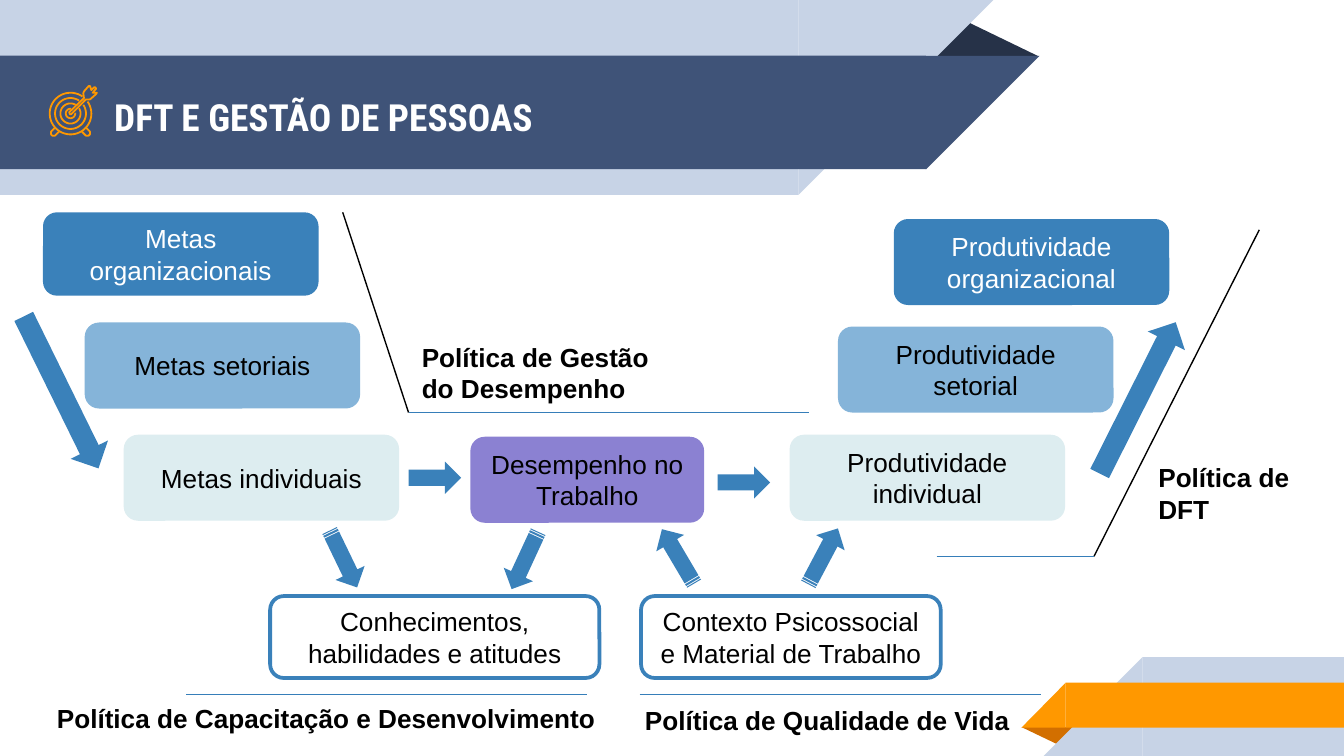
"""Build a slide that links work-force sizing (DFT) to people management."""
from math import cos, radians, sin

from lxml import etree
from pptx import Presentation
from pptx.dml.color import RGBColor
from pptx.enum.shapes import MSO_CONNECTOR, MSO_SHAPE
from pptx.enum.text import MSO_ANCHOR, MSO_AUTO_SIZE, PP_ALIGN
from pptx.oxml.ns import qn
from pptx.util import Inches, Pt

RECT, ROUND = MSO_SHAPE.RECTANGLE, MSO_SHAPE.ROUNDED_RECTANGLE
PEAK, WEDGE = MSO_SHAPE.ISOSCELES_TRIANGLE, MSO_SHAPE.RIGHT_TRIANGLE
RIGHT, DOWN = MSO_SHAPE.RIGHT_ARROW, MSO_SHAPE.DOWN_ARROW
STRIPED = MSO_SHAPE.STRIPED_RIGHT_ARROW
LINE = MSO_CONNECTOR.STRAIGHT
LEFT, CENTER = PP_ALIGN.LEFT, PP_ALIGN.CENTER
TOP, MIDDLE = MSO_ANCHOR.TOP, MSO_ANCHOR.MIDDLE
GROW, FIXED = MSO_AUTO_SIZE.SHAPE_TO_FIT_TEXT, MSO_AUTO_SIZE.NONE

HEX = {
    "white": "FFFFFF", "black": "000000", "navy": "3F5378", "night": "263248",
    "mist": "C7D3E6", "orange": "FF9800", "rust": "D26F00", "blue": "3A81BA",
    "sky": "85B4D9", "ice": "DDEDF0", "violet": "8B81D2", "rule": "367EB9",
}
INK = {name: RGBColor.from_string(code) for name, code in HEX.items()}

deck = Presentation()
deck.slide_width = Inches(10)
deck.slide_height = deck.slide_width * 9 // 16
UNIT = deck.slide_width / 100
slide = deck.slides.add_slide(deck.slide_layouts[5])
shapes = slide.shapes


def put(kind, box, fill, turn=0, flip=False):
    shape = shapes.add_shape(kind, *[round(n * UNIT) for n in box])
    shape.shadow.inherit = False
    shape.fill.solid()
    shape.fill.fore_color.rgb = INK[fill]
    shape.line.fill.background()
    shape.rotation = turn
    if flip:
        shape._element.spPr.find(qn("a:xfrm")).set("flipH", "1")
    return shape


def write(shape, text, size=14, font="Arial", color="black", bold=False,
          align=CENTER, anchor=MIDDLE, fit=FIXED):
    frame = shape.text_frame
    frame.word_wrap = True
    frame.auto_size = fit
    frame.vertical_anchor = anchor
    part = frame.paragraphs[0]
    part.alignment = align
    run = part.add_run()
    run.text = text
    run.font.size, run.font.name, run.font.bold = Pt(size), font, bold
    run.font.color.rgb = INK[color]


for kind, box, fill, turn, flip in [
    (PEAK, (68.8, 1.4, 8.5, 2.8), "night", 0, False),
    (RECT, (0, 0, 59.4, 14.5), "mist", 0, False),
    (WEDGE, (59.4, 0, 14.5, 14.5), "mist", 180, True),
    (RECT, (0, 4.15, 68.9, 8.45), "navy", 0, False),
    (WEDGE, (68.9, 4.15, 8.45, 8.45), "navy", 180, True),
    (PEAK, (76, 54.1, 4.3, 1.4), "rust", 180, False),
    (RECT, (85, 48.9, 15, 7.35), "mist", 0, False),
    (WEDGE, (77.65, 48.9, 7.35, 7.35), "mist", 0, True),
    (RECT, (79.3, 50.8, 20.7, 3.35), "orange", 0, False),
    (WEDGE, (76, 50.8, 3.3, 3.35), "orange", 0, True),
]:
    shape = put(kind, box, fill, turn, flip)
    if kind == PEAK:
        shape.adjustments[0] = 0.32

title = shapes.title
title.left, title.top, title.width, title.height = [
    round(n * UNIT) for n in (7.5, 4.5, 57.5, 8.4)]
frame = title.text_frame
frame.margin_left = frame.margin_right = Inches(0.1)
frame.margin_top = frame.margin_bottom = Inches(0.1)
write(title, "DFT E GESTÃO DE PESSOAS", size=20, font="Roboto Condensed",
      color="white", bold=True, align=LEFT)
shapes._spTree.append(title._element)

foot = [(4.1, 9.5), (3.8, 9.8), (3.8, 10), (3.9, 10.1), (4.1, 10.1), (4.4, 9.8)]
dart = [(7.2, 6.9), (6.9, 6.9), (7.15, 6.6), (7.1, 6.5), (7, 6.5), (6.8, 6.7),
        (6.7, 6.4), (6.6, 6.4), (6.25, 6.8), (6.2, 6.95), (6.25, 7.3),
        (5.15, 8.35), (5.2, 8.5), (5.3, 8.5), (6.4, 7.4), (6.7, 7.4), (7.15, 7)]
paths = [(foot, False), ([(10.5 - x, y) for x, y in foot], False), (dart, True)]
for reach, gap in [(1.55, 10), (1.15, 11), (0.75, 14), (0.35, 37)]:
    sweep = [radians(gap - 45 + (360 - 2 * gap) * i / 48) for i in range(49)]
    ring = [(5.25 + reach * cos(a), 8.45 + reach * sin(a)) for a in sweep]
    paths.append((ring, False))
for path, close in paths:
    spots = [(x * UNIT, y * UNIT) for x, y in path]
    pen = shapes.build_freeform(*spots[0])
    pen.add_line_segments(spots[1:], close=close)
    shape = pen.convert_to_shape()
    shape.shadow.inherit = False
    shape.fill.background()
    shape.line.color.rgb = INK["orange"]
    shape.line.width = Pt(0.96)

for text, box, fill, color in [
    ("Metas organizacionais", (3.2, 15.8, 20.5, 6.2), "blue", "white"),
    ("Metas setoriais", (6.3, 24, 20.5, 6.4), "sky", "black"),
    ("Metas individuais", (9.2, 32.35, 20.5, 6.4), "ice", "black"),
    ("Desempenho no Trabalho", (35, 32.5, 17.4, 6.4), "violet", "black"),
    ("Produtividade individual", (58.75, 32.35, 20.5, 6.4), "ice", "black"),
    ("Produtividade setorial", (62.35, 24.3, 20.5, 6.4), "sky", "black"),
    ("Produtividade organizacional", (66.5, 16.3, 20.5, 6.4), "blue", "white"),
    ("Conhecimentos, habilidades e atitudes", (20.1, 44.35, 24.5, 6.1),
     "white", "black"),
    ("Contexto Psicossocial e Material de Trabalho", (47.7, 44.35, 22.3, 6.1),
     "white", "black"),
]:
    shape = put(ROUND, box, fill)
    if fill == "white":
        shape.line.color.rgb = INK["blue"]
        shape.line.width = Pt(2)
    write(shape, text, color=color)

for kind, size, spots in [
    (RIGHT, (3.9, 2.4), [(30.4, 34.35, 0), (53.4, 34.7, 0)]),
    (DOWN, (3.1, 12.6), [(3, 22.9, 333.8), (83.1, 23.3, 206.7)]),
    (STRIPED, (4.7, 2.4), [(23.2, 40.4, 64.2), (36.7, 40.5, 114.8),
                           (48.1, 40.2, 239.4), (58.9, 40.2, 297.9)]),
]:
    for x, y, turn in spots:
        put(kind, (x, y, *size), "blue", turn)

for ends, color in [
    ((25.5, 15.8, 30.4, 30.7), "black"),
    ((30.4, 30.7, 60.2, 30.7), "rule"),
    ((13.85, 51.7, 43.7, 51.7), "rule"),
    ((47.6, 51.7, 77.45, 51.7), "rule"),
    ((93.7, 17.1, 81.4, 41.4), "black"),
    ((69.7, 41.4, 81.4, 41.4), "rule"),
]:
    line = shapes.add_connector(LINE, *[round(n * UNIT) for n in ends])
    line.line.color.rgb = INK[color]
    line.line.width = Pt(0.75)
    etree.SubElement(line._element.spPr, qn("a:effectLst"))

for text, box in [
    ("Política de Gestão do Desempenho", (30.4, 24.9, 21.7, 5.7)),
    ("Política de Capacitação e Desenvolvimento", (3.25, 51.75, 45.4, 3.4)),
    ("Política de Qualidade de Vida", (47, 51.9, 32.8, 3.4)),
    ("Política de DFT", (85.2, 33.85, 13.2, 5.7)),
]:
    label = shapes.add_textbox(*[round(n * UNIT) for n in box])
    write(label, text, bold=True, align=LEFT, anchor=TOP, fit=GROW)

deck.save("out.pptx")
